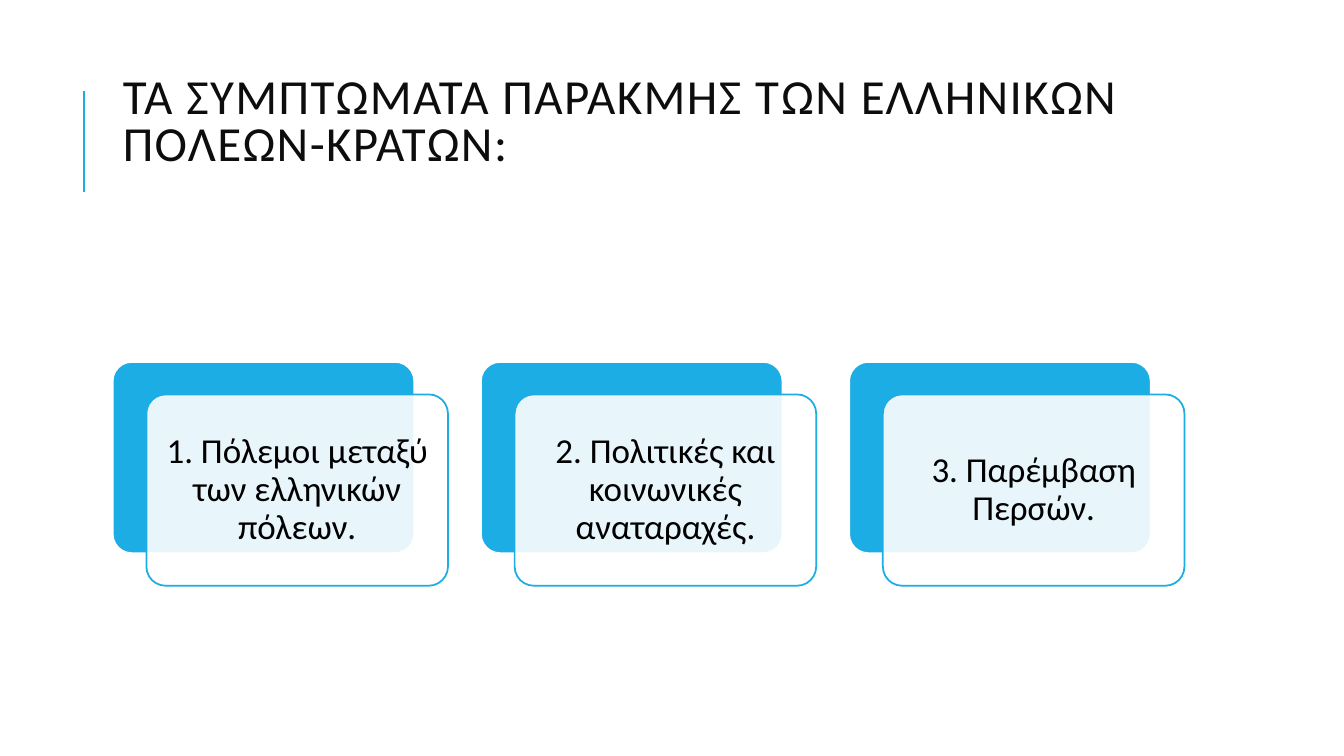
from dataclasses import dataclass

from lxml.etree import SubElement
from pptx import Presentation
from pptx.dml.color import RGBColor as Rgb
from pptx.enum.lang import MSO_LANGUAGE_ID as Language
from pptx.enum.shapes import MSO_CONNECTOR as Connector, MSO_SHAPE as Shape
from pptx.enum.text import MSO_ANCHOR as Anchor, MSO_AUTO_SIZE as AutoSize, PP_ALIGN as Align
from pptx.oxml.ns import qn
from pptx.util import Cm, Pt


@dataclass(frozen=True)
class Theme:
    """Colours, font and type sizes of the deck."""
    accent: Rgb = Rgb(0x1C, 0xAD, 0xE4)
    paper: Rgb = Rgb(0xFF, 0xFF, 0xFF)
    heading: Rgb = Rgb(0x0D, 0x0D, 0x0D)
    ink: Rgb = Rgb(0, 0, 0)
    font: str = "Calibri"
    title_size: float = 35
    card_size: float = 25
    rule_width: float = 1.5
    outline_width: float = 1.25


class SlideBuilder:
    """Draws styled elements on the current slide."""

    def __init__(self, slide, theme):
        """Keep the slide and its theme."""
        self.slide = slide
        self.theme = theme

    def add_text(self, frame, text, size, color, align, spacing):
        """Add one formatted paragraph and return its run."""
        frame.word_wrap = True
        frame.auto_size = AutoSize.NONE
        frame.vertical_anchor = Anchor.MIDDLE
        para = frame.paragraphs[0]
        para.alignment = align
        para.line_spacing = spacing
        span = para.add_run()
        span.text = text
        span.font.name = self.theme.font
        span.font.size = Pt(size)
        span.font.color.rgb = color
        span.font.language_id = Language.GREEK
        return span

    def title(self, text, left, top, width, height):
        """Place the title in spaced capitals, raised above the middle."""
        box = self.slide.shapes.title
        box.left, box.top, box.width, box.height = map(Cm, (left, top, width, height))
        box.text_frame.margin_bottom = Cm(1.32)
        span = self.add_text(box.text_frame, text, self.theme.title_size,
                             self.theme.heading, Align.LEFT, 0.8)
        properties = span.font._element
        properties.set("cap", "all")
        properties.set("spc", "100")

    def rule(self, x, top, bottom):
        """Draw a vertical accent line."""
        line = self.slide.shapes.add_connector(
            Connector.STRAIGHT, Cm(x), Cm(bottom), Cm(x), Cm(top))
        line.line.color.rgb = self.theme.accent
        line.line.width = Pt(self.theme.rule_width)
        SubElement(line._element.spPr, qn("a:effectLst"))

    def panel(self, left, top, width, height, fill, outline):
        """Draw a rounded panel."""
        box = self.slide.shapes.add_shape(
            Shape.ROUNDED_RECTANGLE, Cm(left), Cm(top), Cm(width), Cm(height))
        box.adjustments[0] = 0.1
        box.shadow.inherit = False
        box.fill.solid()
        box.fill.fore_color.rgb = fill
        box.line.color.rgb = outline
        box.line.width = Pt(self.theme.outline_width)
        return box

    def card(self, text, left, top, width, height):
        """Draw an accent panel with an offset translucent text panel."""
        theme = self.theme
        self.panel(left, top, width, height, theme.accent, theme.paper)
        front = self.panel(left + 0.85, top + 0.82, width, height, theme.paper, theme.accent)
        color = front._element.spPr.find(qn("a:solidFill")).find(qn("a:srgbClr"))
        SubElement(color, qn("a:alpha"), val="90000")
        frame = front.text_frame
        frame.margin_left = frame.margin_right = Cm(0.25)
        frame.margin_top = frame.margin_bottom = Cm(0.25)
        self.add_text(frame, text, theme.card_size, theme.ink, Align.CENTER, 0.9)


def main():
    """Build and save the deck."""
    deck = Presentation()
    deck.slide_width, deck.slide_height = Cm(33.87), Cm(19.05)
    page = SlideBuilder(deck.slides.add_slide(deck.slide_layouts[5]), Theme())
    page.rule(2.12, 2.29, 4.83)
    page.title("Τα συμπτώματα παρακμής των ελληνικών πόλεων-κρατών:",
               2.84, 1.63, 27, 4.17)
    symptoms = (
        "1. Πόλεμοι μεταξύ των ελληνικών πόλεων.",
        "2. Πολιτικές και κοινωνικές αναταραχές.",
        "3. Παρέμβαση Περσών.",
    )
    for index, symptom in enumerate(symptoms):
        page.card(symptom, 2.84 + index * 9.28, 9.12, 7.6, 4.82)
    deck.save("out.pptx")


if __name__ == "__main__":
    main()
